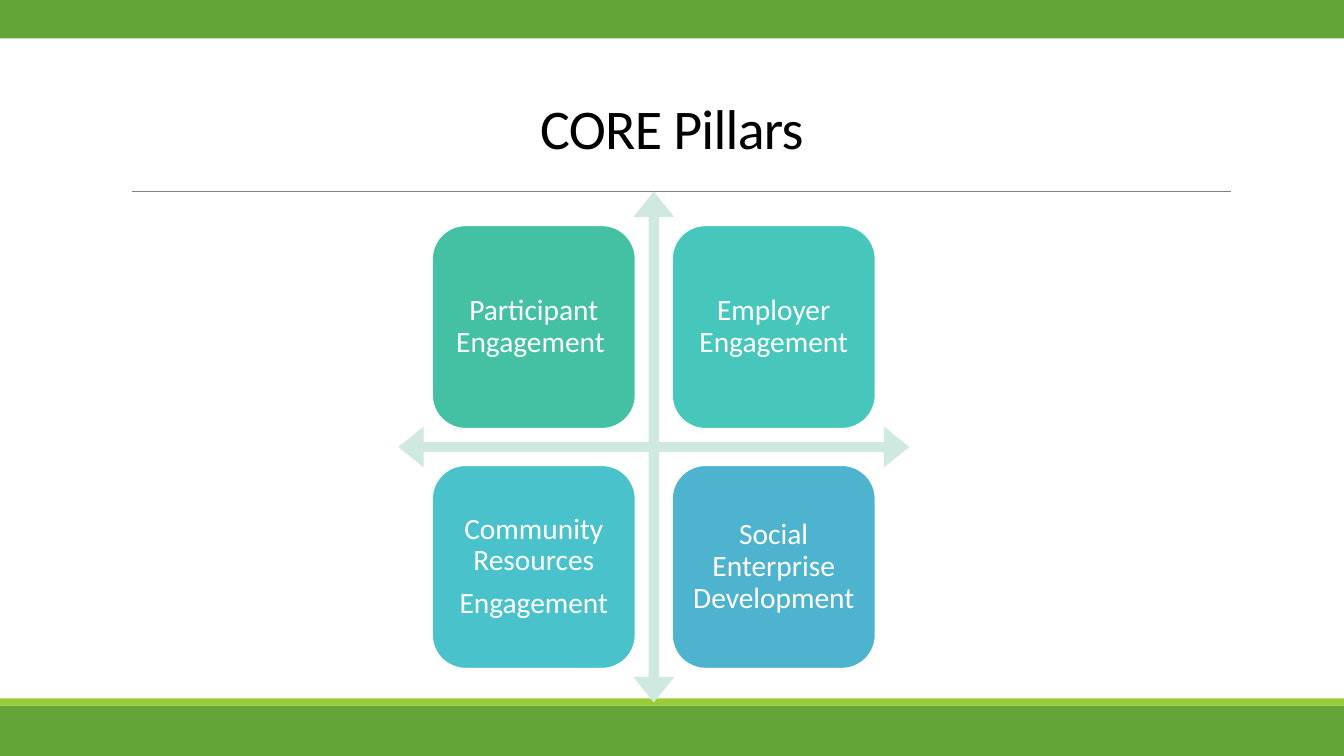
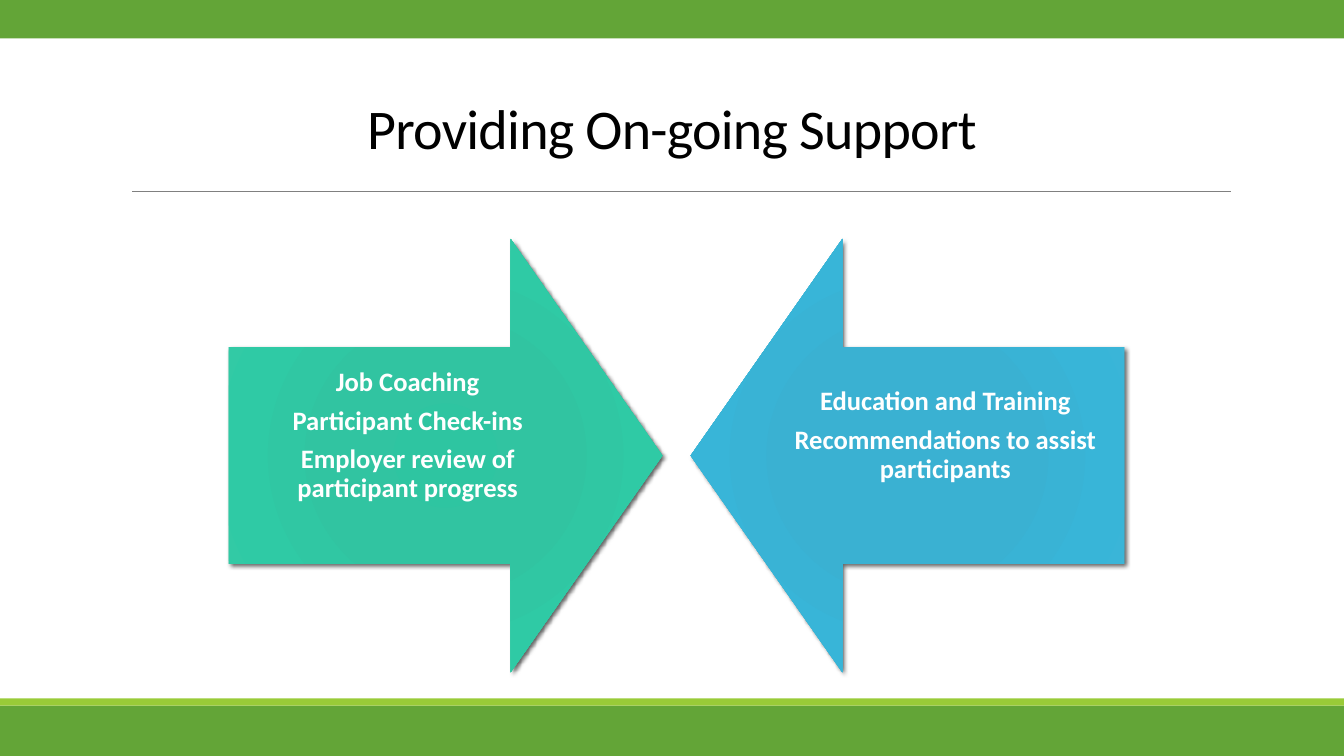
"""Builds two slides on the CORE pillars and on-going support."""
from lxml import etree
from pptx import Presentation
from pptx.dml.color import RGBColor
from pptx.enum.shapes import MSO_CONNECTOR, MSO_SHAPE
from pptx.enum.text import MSO_ANCHOR, PP_ALIGN
from pptx.oxml import parse_xml
from pptx.oxml.ns import nsdecls, qn
from pptx.util import Pt

PX = 9144
WIDE, HIGH = 1333, 750
FONT = "Calibri"
BLACK = RGBColor(0x00, 0x00, 0x00)
WHITE = RGBColor(0xFF, 0xFF, 0xFF)
GRAY = RGBColor(0x80, 0x80, 0x80)
GREEN = RGBColor(0x63, 0xA5, 0x37)
LIME = RGBColor(0x99, 0xCB, 0x38)
MINT = RGBColor(0xCF, 0xE9, 0xE0)

RECT = MSO_SHAPE.RECTANGLE
ROUND = MSO_SHAPE.ROUNDED_RECTANGLE
CROSS = MSO_SHAPE.QUAD_ARROW
RIGHT = MSO_SHAPE.RIGHT_ARROW
LEFT = MSO_SHAPE.LEFT_ARROW
LINE = MSO_CONNECTOR.STRAIGHT
MIDDLE = MSO_ANCHOR.MIDDLE
CENTER = PP_ALIGN.CENTER

BANDS = [(700, 50, GREEN), (693, 7, LIME), (0, 38, GREEN)]
STOPS = (0, 34, 70, 100)
PILLARS = [
    (["Participant Engagement "], RGBColor(0x44, 0xC1, 0xA3)),
    (["Employer Engagement"], RGBColor(0x47, 0xC6, 0xBB)),
    (["Community Resources", "Engagement"], RGBColor(0x4A, 0xC2, 0xCB)),
    (["Social Enterprise Development"], RGBColor(0x4E, 0xB3, 0xCF)),
]
TEAL = [RGBColor(0x2E, 0xC5, 0xA1), RGBColor(0x31, 0xC4, 0xA1),
        RGBColor(0x2F, 0xCA, 0xA5), RGBColor(0x3E, 0xC7, 0xA6)]
BLUE = [RGBColor(0x37, 0xB1, 0xD3), RGBColor(0x3A, 0xB1, 0xD2),
        RGBColor(0x38, 0xB5, 0xD8), RGBColor(0x48, 0xB7, 0xD5)]
ARROWS = [
    (RIGHT, TEAL, ["Job Coaching", "Participant Check-ins",
                   "Employer review of participant progress"]),
    (LEFT, BLUE, ["Education and Training",
                  "Recommendations to assist participants"]),
]


def emu(*sizes):
    """Turn px lengths into EMU."""
    return [size * PX for size in sizes]


def shape(slide, kind, box, color):
    """Add a flat preset shape without outline."""
    item = slide.shapes.add_shape(kind, *emu(*box))
    item.shadow.inherit = False
    item.fill.solid()
    item.fill.fore_color.rgb = color
    item.line.fill.background()
    return item


def write(item, lines, size, color=WHITE, bold=False, space=0.9, pads=None):
    """Fill a shape with centred paragraphs."""
    frame = item.text_frame
    frame.word_wrap = True
    frame.vertical_anchor = MIDDLE
    if pads:
        (frame.margin_left, frame.margin_top,
         frame.margin_right, frame.margin_bottom) = emu(*pads)
    frame.text = "\n".join(lines)
    for order, para in enumerate(frame.paragraphs):
        para.alignment = CENTER
        para.line_spacing = space
        if order:
            para.space_before = Pt(round(size * 0.38, 1))
        for run in para.runs:
            font = run.font
            font.name, font.size, font.bold = FONT, Pt(size), bold
            font.color.rgb = color
    return frame


def base(deck, title):
    """Add a slide with bands, rule and title."""
    slide = deck.slides.add_slide(deck.slide_layouts[6])
    for top, high, color in BANDS:
        shape(slide, RECT, (0, top, WIDE, high), color)
    rule = slide.shapes.add_connector(LINE, *emu(131, 190, 1221, 190))
    rule.line.color.rgb = GRAY
    rule.line.width = Pt(0.5)
    etree.SubElement(rule.element.spPr, qn("a:effectLst"))
    head = slide.shapes.add_textbox(*emu(0, 73, WIDE, 117))
    frame = write(head, [title], 40, BLACK, space=0.85)
    frame.paragraphs[0].runs[0].font._element.set("spc", "-50")
    return slide


def matrix(slide, left, top, side):
    """Draw four pillars around a crossed arrow."""
    cross = shape(slide, CROSS, (left, top, side, side), MINT)
    for order, value in enumerate((0.02, 0.04, 0.05)):
        cross.adjustments[order] = value
    tile = round(side * 0.4)
    edge = round(side * 0.065)
    step = side - 2 * edge - tile
    for order, (lines, color) in enumerate(PILLARS):
        row, col = divmod(order, 2)
        box = left + edge + col * step, top + edge + row * step, tile, tile
        card = shape(slide, ROUND, box, color)
        card.line.color.rgb = WHITE
        card.line.width = Pt(2)
        write(card, lines, 21, pads=(9, 9, 9, 9))


def shade(item, colors):
    """Give a shape a round gradient and a soft shadow."""
    stops = "".join(
        f'<a:gs pos="{pos * 1000}"><a:srgbClr val="{color}"/></a:gs>'
        for pos, color in zip(STOPS, colors))
    fill = parse_xml(
        f'<a:gradFill {nsdecls("a")} rotWithShape="1"><a:gsLst>{stops}</a:gsLst>'
        '<a:path path="circle"><a:fillToRect l="100000" t="100000" '
        'r="100000" b="100000"/></a:path></a:gradFill>')
    props = item.element.spPr
    props.replace(props.find(qn("a:solidFill")), fill)
    glow = parse_xml(
        f'<a:outerShdw {nsdecls("a")} blurRad="{Pt(3)}" dist="{Pt(2)}" '
        'dir="2700000" algn="tl" rotWithShape="0"><a:srgbClr val="000000">'
        '<a:alpha val="60000"/></a:srgbClr></a:outerShdw>')
    props.find(qn("a:effectLst")).append(glow)


def facing(slide, left, top, side, gap):
    """Draw two arrows that point at each other."""
    for order, (kind, colors, lines) in enumerate(ARROWS):
        box = left + order * (side + gap), top, side, side
        arrow = shape(slide, kind, box, colors[0])
        arrow.adjustments[0] = 0.5
        arrow.adjustments[1] = 0.35
        shade(arrow, colors)
        write(arrow, lines, 19, bold=True, pads=(15, 15, 15, 54))


def main():
    """Build and save the deck."""
    deck = Presentation()
    deck.slide_width, deck.slide_height = emu(WIDE, HIGH)
    matrix(base(deck, "CORE Pillars"), 395, 190, 507)
    facing(base(deck, "Providing On-going Support"), 227, 237, 430, 28)
    deck.save("out.pptx")


if __name__ == "__main__":
    main()
